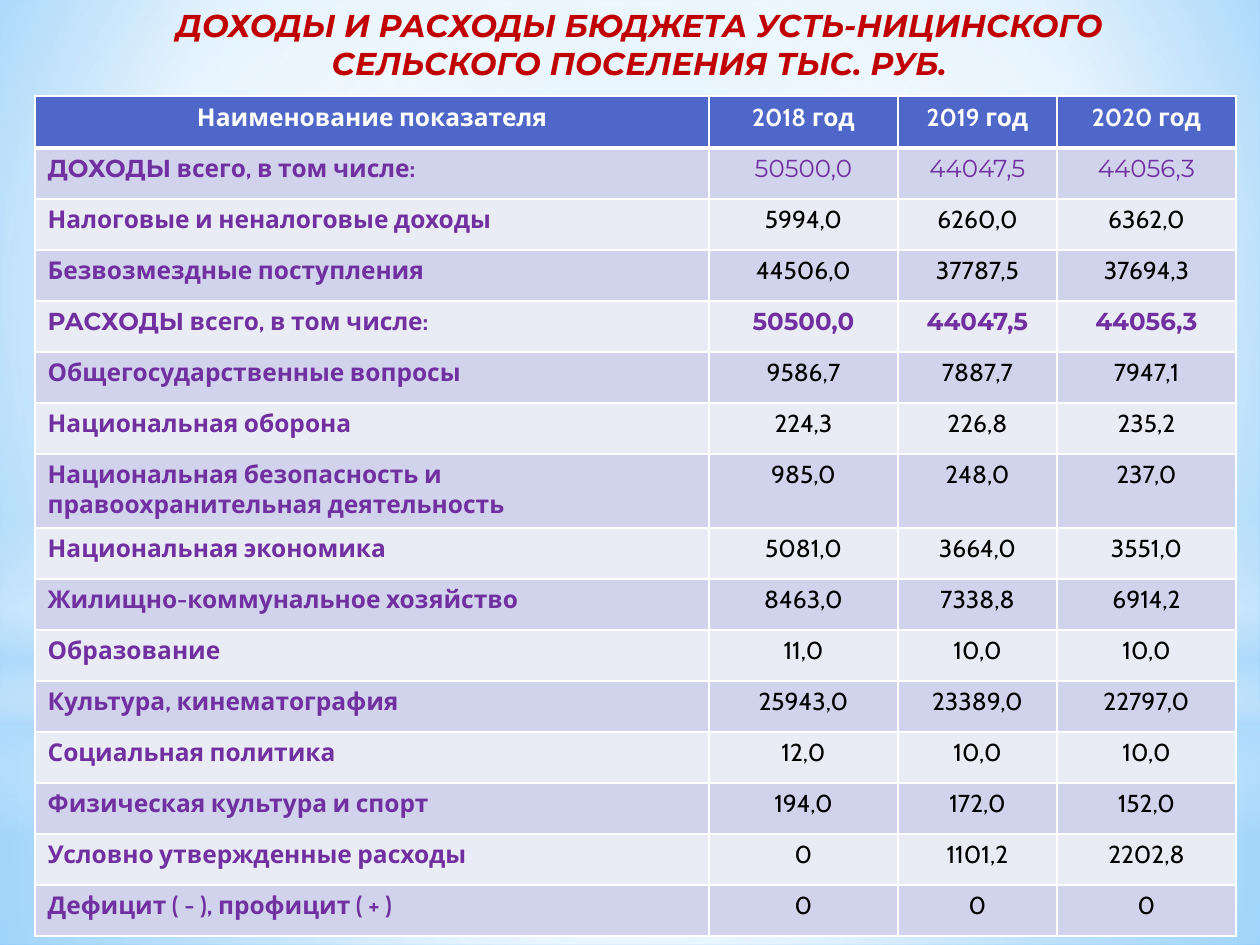
from lxml.etree import SubElement
from pptx import Presentation
from pptx.dml.color import RGBColor
from pptx.enum.shapes import MSO_SHAPE
from pptx.enum.text import MSO_ANCHOR, PP_ALIGN
from pptx.oxml import parse_xml
from pptx.oxml.ns import nsdecls, qn
from pptx.util import Pt

EMU_PER_PX = 914400 / 126
WIDTH, HEIGHT = 1260, 945

RED = RGBColor(0xC0, 0x00, 0x00)
PURPLE = RGBColor(0x70, 0x30, 0xA0)
BLACK = RGBColor(0x00, 0x00, 0x00)
WHITE = RGBColor(0xFF, 0xFF, 0xFF)
HEADER_BLUE = RGBColor(0x4E, 0x67, 0xC8)
BAND_DARK = RGBColor(0xD0, 0xD3, 0xEB)
BAND_LIGHT = RGBColor(0xE9, 0xEB, 0xF5)
SKY = RGBColor(0x9E, 0xD5, 0xFF)
DEEP_SKY = RGBColor(0x5B, 0xB9, 0xFF)
PALE_SKY = RGBColor(0xB4, 0xDC, 0xFA)

BODY_FONT, TITLE_FONT = "Cabin", "Montserrat"
CENTER = (50, 50, 50, 50)

TITLE = "ДОХОДЫ И РАСХОДЫ БЮДЖЕТА УСТЬ-НИЦИНСКОГО СЕЛЬСКОГО ПОСЕЛЕНИЯ ТЫС. РУБ."
HEADER = ("Наименование показателя", "2018 год", "2019 год", "2020 год")
INCOME, EXPENSES = "ДОХОДЫ", "РАСХОДЫ"
TOTAL_SUFFIX = " всего, в том числе:"
BUDGET = [
    (INCOME, "50500,0", "44047,5", "44056,3"),
    ("Налоговые и неналоговые доходы", "5994,0", "6260,0", "6362,0"),
    ("Безвозмездные поступления", "44506,0", "37787,5", "37694,3"),
    (EXPENSES, "50500,0", "44047,5", "44056,3"),
    ("Общегосударственные вопросы", "9586,7", "7887,7", "7947,1"),
    ("Национальная оборона", "224,3", "226,8", "235,2"),
    ("Национальная безопасность и правоохранительная деятельность",
     "985,0", "248,0", "237,0"),
    ("Национальная экономика", "5081,0", "3664,0", "3551,0"),
    ("Жилищно-коммунальное хозяйство", "8463,0", "7338,8", "6914,2"),
    ("Образование", "11,0", "10,0", "10,0"),
    ("Культура, кинематография", "25943,0", "23389,0", "22797,0"),
    ("Социальная политика", "12,0", "10,0", "10,0"),
    ("Физическая культура и спорт", "194,0", "172,0", "152,0"),
    ("Условно утвержденные расходы", "0", "1101,2", "2202,8"),
    ("Дефицит ( - ), профицит ( + )", "0", "0", "0"),
]
COLUMN_WIDTHS = (674, 189, 159, 179)
HEADER_HEIGHT, ROW_HEIGHT, TALL_ROW_HEIGHT = 52, 51, 74
TALL_ROW = 7


def px(*lengths):
    return [round(length * EMU_PER_PX) for length in lengths]


def set_gradient(owner, fill, stops, center=None):
    """Stops are (position, colour, opacity) in percent; no center means top to bottom."""
    fill.gradient()
    gradient = owner.find(".//" + qn("a:gradFill"))
    for child in list(gradient):
        gradient.remove(child)
    stop_list = SubElement(gradient, qn("a:gsLst"))
    for position, color, opacity in stops:
        stop = SubElement(stop_list, qn("a:gs"), pos=str(position * 1000))
        srgb = SubElement(stop, qn("a:srgbClr"), val=str(color))
        if opacity < 100:
            SubElement(srgb, qn("a:alpha"), val=str(opacity * 1000))
    if center:
        circle = SubElement(gradient, qn("a:path"), path="circle")
        sides = {side: str(value * 1000) for side, value in zip("ltrb", center)}
        SubElement(circle, qn("a:fillToRect"), **sides)
    else:
        SubElement(gradient, qn("a:lin"), ang="5400000", scaled="0")


def add_glow(slide, kind, box, stops, center=None):
    shape = slide.shapes.add_shape(kind, *px(*box))
    shape.shadow.inherit = False
    shape.line.fill.background()
    set_gradient(shape.element, shape.fill, stops, center)


def add_text(paragraph, text, font=BODY_FONT, size=14, color=BLACK,
             bold=False, italic=False, align=PP_ALIGN.CENTER):
    paragraph.alignment = align
    run = paragraph.add_run()
    run.text = text
    run.font.name = font
    run.font.size = Pt(size)
    run.font.color.rgb = color
    run.font.bold = bold
    run.font.italic = italic


def style_cell(cell, color, top=1, bottom=1):
    cell.fill.solid()
    cell.fill.fore_color.rgb = color
    properties = cell._tc.get_or_add_tcPr()
    for index, (side, width) in enumerate(zip("LRTB", (1, 1, top, bottom))):
        properties.insert(index, parse_xml(
            f'<a:ln{side} {nsdecls("a")} w="{Pt(width)}"><a:solidFill>'
            f'<a:srgbClr val="{WHITE}"/></a:solidFill></a:ln{side}>'))


def add_backdrop(slide):
    set_gradient(slide.element, slide.background.fill,
                 [(0, SKY, 100), (60, WHITE, 100), (100, DEEP_SKY, 100)],
                 (20, 10, 20, 60))
    rectangle = MSO_SHAPE.RECTANGLE
    add_glow(slide, rectangle, (0, 703, WIDTH, 242),
             [(0, WHITE, 91), (37, WHITE, 76), (100, PALE_SKY, 79)], CENTER)
    add_glow(slide, rectangle, (0, 0, WIDTH, 703),
             [(0, WHITE, 89), (48, WHITE, 62), (100, PALE_SKY, 79)], CENTER)
    add_glow(slide, rectangle, (0, 519, WIDTH, 315),
             [(0, WHITE, 0), (29, WHITE, 30), (45, PALE_SKY, 40),
              (55, WHITE, 26), (65, PALE_SKY, 60), (100, WHITE, 0)])
    add_glow(slide, MSO_SHAPE.OVAL, (0, 220, WIDTH, 703),
             [(0, WHITE, 100), (56, WHITE, 0)], CENTER)


def add_title(slide):
    frame = slide.shapes.add_textbox(*px(84, 0, 1111, 76)).text_frame
    frame.word_wrap = True
    frame.vertical_anchor = MSO_ANCHOR.TOP
    add_text(frame.paragraphs[0], TITLE, font=TITLE_FONT, size=18,
             color=RED, bold=True, italic=True)


def fill_budget_row(cells, label, values, color, top):
    is_total = label in (INCOME, EXPENSES)
    for cell in cells:
        style_cell(cell, color, top=top)
    paragraph = cells[0].text_frame.paragraphs[0]
    label_format = dict(color=PURPLE, bold=True, align=PP_ALIGN.LEFT)
    add_text(paragraph, label, font=TITLE_FONT if is_total else BODY_FONT, **label_format)
    if is_total:
        add_text(paragraph, TOTAL_SUFFIX, **label_format)
    for cell, value in zip(cells[1:], values):
        add_text(cell.text_frame.paragraphs[0], value,
                 font=TITLE_FONT if is_total else BODY_FONT,
                 color=PURPLE if is_total else BLACK, bold=label == EXPENSES)


def add_budget_table(slide):
    heights = [HEADER_HEIGHT] + [ROW_HEIGHT] * len(BUDGET)
    heights[TALL_ROW] = TALL_ROW_HEIGHT
    table = slide.shapes.add_table(
        len(heights), len(COLUMN_WIDTHS),
        *px(35, 96, sum(COLUMN_WIDTHS), sum(heights))).table
    table.horz_banding = False
    for column, width in zip(table.columns, px(*COLUMN_WIDTHS)):
        column.width = width
    for row, height in zip(table.rows, px(*heights)):
        row.height = height

    # Header row, with a thick rule below
    for cell, heading in zip(table.rows[0].cells, HEADER):
        style_cell(cell, HEADER_BLUE, bottom=3)
        add_text(cell.text_frame.paragraphs[0], heading, color=WHITE, bold=True)

    # Banded budget rows
    for index, (label, *values) in enumerate(BUDGET):
        fill_budget_row(list(table.rows[index + 1].cells), label, values,
                        BAND_LIGHT if index % 2 else BAND_DARK,
                        top=1 if index else 3)


def main():
    presentation = Presentation()
    presentation.slide_width, presentation.slide_height = px(WIDTH, HEIGHT)
    slide = presentation.slides.add_slide(presentation.slide_layouts[6])
    add_backdrop(slide)
    add_title(slide)
    add_budget_table(slide)
    presentation.save("out.pptx")


if __name__ == "__main__":
    main()
